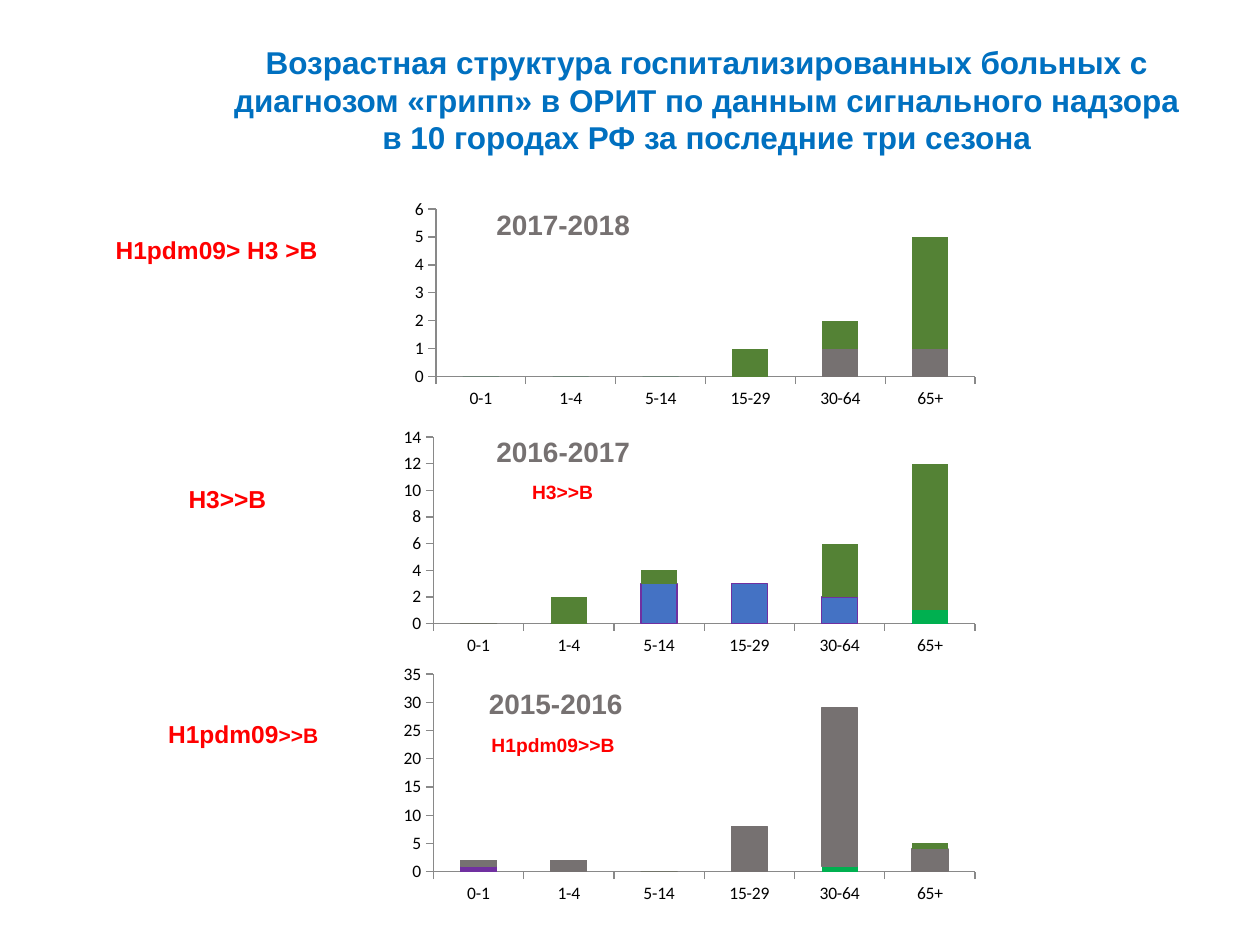
from dataclasses import dataclass
from typing import Optional

from lxml import etree
from pptx import Presentation
from pptx.chart.data import CategoryChartData
from pptx.dml.color import RGBColor
from pptx.enum.chart import XL_CHART_TYPE, XL_TICK_MARK
from pptx.enum.text import MSO_ANCHOR, PP_ALIGN
from pptx.oxml.ns import qn
from pptx.util import Inches, Pt

STACKED = XL_CHART_TYPE.COLUMN_STACKED
TICK_OUT = XL_TICK_MARK.OUTSIDE
LEFT, CENTER = PP_ALIGN.LEFT, PP_ALIGN.CENTER
TOP = MSO_ANCHOR.TOP

TITLE_BLUE = RGBColor(0x00, 0x70, 0xC0)
RED = RGBColor(0xFF, 0x00, 0x00)
BLACK = RGBColor(0x00, 0x00, 0x00)
AXIS_GRAY = RGBColor(0x89, 0x89, 0x89)
GRAY = RGBColor(0x76, 0x71, 0x71)
PURPLE = RGBColor(0x70, 0x30, 0xA0)
BRIGHT_GREEN = RGBColor(0x00, 0xB0, 0x50)
BLUE = RGBColor(0x44, 0x72, 0xC4)
DARK_GREEN = RGBColor(0x54, 0x82, 0x35)

AGE_GROUPS = ("0-1", "1-4", "5-14", "15-29", "30-64", "65+")


@dataclass
class Area:
    left: float
    top: float
    width: float
    height: float

    def lengths(self):
        return [Inches(v) for v in (self.left, self.top, self.width, self.height)]


@dataclass
class Bars:
    values: tuple
    fill: RGBColor
    outline: Optional[RGBColor] = None


@dataclass
class Season:
    area: Area
    plot: Area
    maximum: int
    step: int
    series: tuple


@dataclass
class Label:
    area: Area
    spans: tuple  # (text, size) pairs
    color: RGBColor = RED
    align: PP_ALIGN = CENTER


SEASONS = (
    Season(Area(3.21, 1.55, 4.63, 1.73), Area(3.46, 1.66, 4.28, 1.33), 6, 1, (
        Bars((0, 0, 0, 0, 0, 0), PURPLE),
        Bars((0, 0, 0, 0, 0, 0), BRIGHT_GREEN),
        Bars((0, 0, 0, 0, 1, 1), GRAY),
        Bars((0, 0, 0, 1, 1, 4), DARK_GREEN))),
    Season(Area(3.11, 3.36, 4.72, 1.89), Area(3.44, 3.47, 4.3, 1.48), 14, 2, (
        Bars((0, 0, 3, 3, 2, 0), BLUE, PURPLE),
        Bars((0, 0, 0, 0, 0, 1), BRIGHT_GREEN),
        Bars((0, 0, 0, 0, 0, 0), GRAY, GRAY),
        Bars((0, 2, 1, 0, 4, 11), DARK_GREEN))),
    Season(Area(3.11, 5.23, 4.72, 1.98), Area(3.44, 5.35, 4.3, 1.57), 35, 5, (
        Bars((1, 0, 0, 0, 0, 0), PURPLE),
        Bars((0, 0, 0, 0, 1, 0), BRIGHT_GREEN),
        Bars((1, 2, 0, 8, 28, 4), GRAY, GRAY),
        Bars((0, 0, 0, 0, 0, 1), DARK_GREEN))),
)

LABELS = (
    # Season names
    Label(Area(3.84, 1.6, 1.71, 0.37), (("2017-2018", 16),), GRAY, LEFT),
    Label(Area(3.66, 3.4, 1.62, 0.37), (("2016-2017", 16),), GRAY),
    Label(Area(3.6, 5.4, 1.62, 0.37), (("2015-2016", 16),), GRAY),
    # Dominant viruses, inside the charts
    Label(Area(3.72, 3.76, 1.49, 0.29), (("H3>>В", 11),)),
    Label(Area(3.6, 5.77, 1.58, 0.29), (("H1pdm09>>В", 11),)),
    # Dominant viruses, left column
    Label(Area(0.72, 1.82, 2, 0.34), (("H1pdm09> H3 >В", 14),)),
    Label(Area(1.06, 3.79, 1.49, 0.34), (("H3>>В", 14),)),
    Label(Area(1.14, 5.66, 1.58, 0.34), (("H1pdm09", 14), (">>В", 12))),
)


def add_span(para, text: str, *, size: float, color: RGBColor, bold: bool = True,
             font: str = "Arial") -> None:
    span = para.add_run()
    span.text = text
    span.font.name = font
    span.font.size = Pt(size)
    span.font.bold = bold
    span.font.color.rgb = color


def place_title(page, text: str, area: Area) -> None:
    box = page.shapes.title
    box.left, box.top, box.width, box.height = area.lengths()
    frame = box.text_frame
    frame.word_wrap = True
    frame.vertical_anchor = TOP
    para = frame.paragraphs[0]
    para.alignment = CENTER
    para.line_spacing = 1.0
    para.space_before = Pt(0)
    add_span(para, text, size=18, color=TITLE_BLUE)


def add_label(page, label: Label) -> None:
    frame = page.shapes.add_textbox(*label.area.lengths()).text_frame
    frame.word_wrap = True
    para = frame.paragraphs[0]
    para.alignment = label.align
    for text, size in label.spans:
        add_span(para, text, size=size, color=label.color)


def fix_plot_area(chart, area: Area, plot: Area) -> None:
    """Pin the inner plot area, given in slide inches."""
    plot_area = chart.plots[0]._element.getparent()
    for old in plot_area.findall(qn("c:layout")):
        plot_area.remove(old)
    layout = etree.Element(qn("c:layout"))
    plot_area.insert(0, layout)
    manual = etree.SubElement(layout, qn("c:manualLayout"))
    settings = (
        ("layoutTarget", "inner"), ("xMode", "edge"), ("yMode", "edge"),
        ("x", (plot.left - area.left) / area.width),
        ("y", (plot.top - area.top) / area.height),
        ("w", plot.width / area.width),
        ("h", plot.height / area.height),
    )
    for name, value in settings:
        etree.SubElement(manual, qn(f"c:{name}")).set("val", str(value))


def add_season_chart(page, season: Season) -> None:
    data = CategoryChartData()
    data.categories = AGE_GROUPS
    for number, bars in enumerate(season.series, 1):
        data.add_series(f"Series {number}", bars.values)
    chart = page.shapes.add_chart(STACKED, *season.area.lengths(), data).chart
    chart.has_legend = False
    chart.has_title = False
    chart.font.name = "Calibri"
    chart.font.size = Pt(10)
    chart.font.color.rgb = BLACK

    # Columns
    columns = chart.plots[0]
    columns.gap_width = 150
    columns.overlap = 100
    columns.vary_by_categories = False
    for series, bars in zip(columns.series, season.series):
        series.invert_if_negative = False
        series.format.fill.solid()
        series.format.fill.fore_color.rgb = bars.fill
        if bars.outline is None:
            series.format.line.fill.background()
        else:
            series.format.line.color.rgb = bars.outline
            series.format.line.width = Pt(0.75)

    # Axes
    for axis in (chart.category_axis, chart.value_axis):
        axis.has_major_gridlines = False
        axis.major_tick_mark = TICK_OUT
        axis.format.line.color.rgb = AXIS_GRAY
        axis.format.line.width = Pt(0.75)
    chart.value_axis.minimum_scale = 0
    chart.value_axis.maximum_scale = season.maximum
    chart.value_axis.major_unit = season.step
    fix_plot_area(chart, season.area, season.plot)


def main() -> None:
    deck = Presentation()
    deck.slide_width, deck.slide_height = Inches(10), Inches(7.5)
    page = deck.slides.add_slide(deck.slide_layouts[5])
    place_title(page, "Возрастная структура госпитализированных больных с "
                "диагнозом «грипп» в ОРИТ по данным сигнального надзора "
                "в 10 городах РФ за последние три сезона",
                Area(1.65, 0.29, 7.92, 1.01))
    for season in SEASONS:
        add_season_chart(page, season)
    for label in LABELS:
        add_label(page, label)
    deck.save("out.pptx")


if __name__ == "__main__":
    main()
